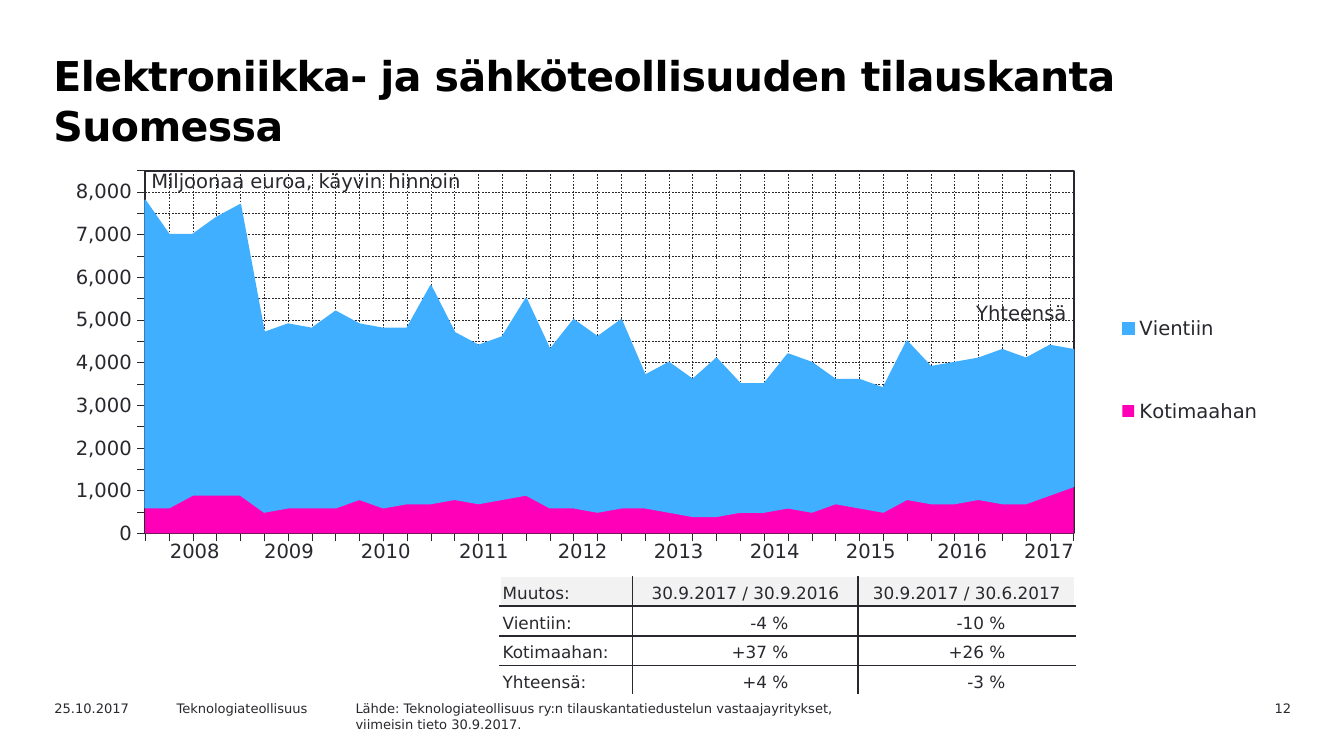
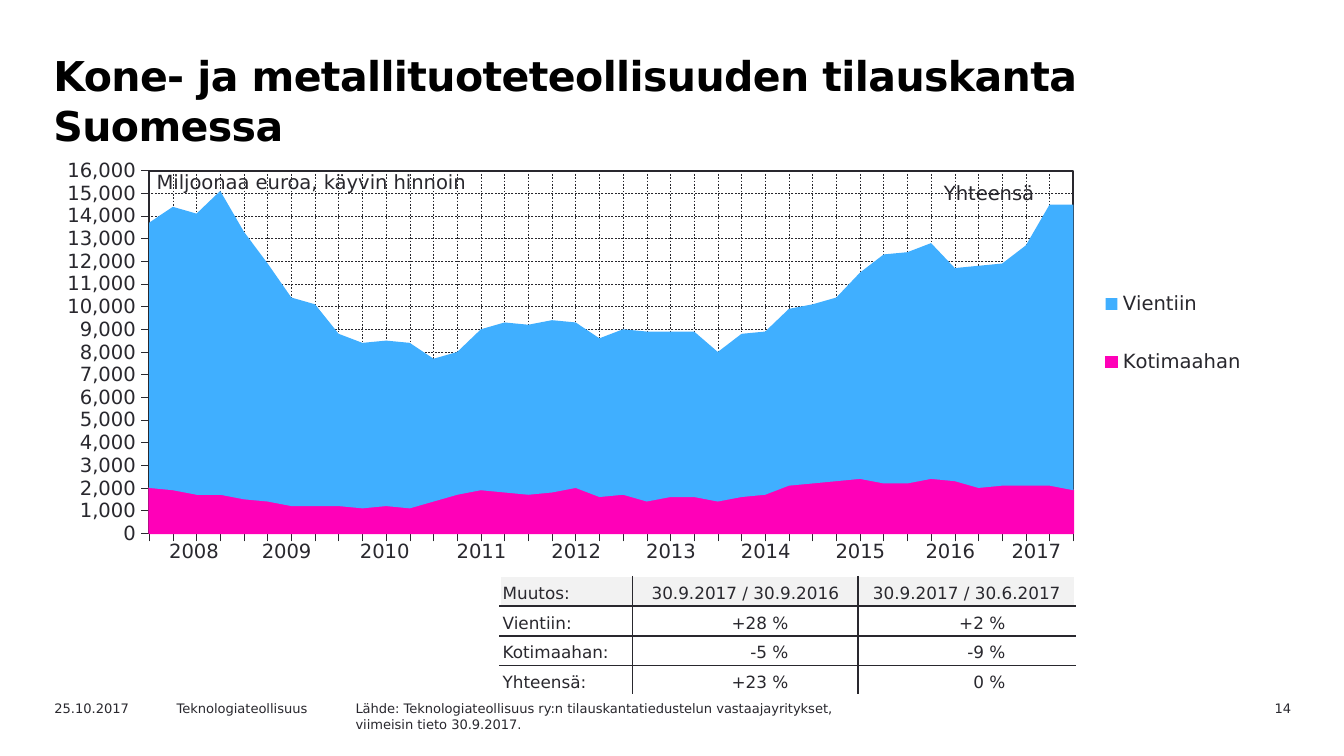
from lxml import etree
from pptx import Presentation
from pptx.chart.data import CategoryChartData
from pptx.dml.color import RGBColor
from pptx.enum.chart import XL_CHART_TYPE, XL_LEGEND_POSITION, XL_TICK_LABEL_POSITION, XL_TICK_MARK
from pptx.enum.dml import MSO_LINE
from pptx.enum.text import MSO_ANCHOR, PP_ALIGN
from pptx.oxml import parse_xml
from pptx.oxml.ns import nsdecls, qn
from pptx.util import Cm, Pt

AREA = XL_CHART_TYPE.AREA_STACKED
LEGEND_RIGHT = XL_LEGEND_POSITION.RIGHT
NO_LABELS = XL_TICK_LABEL_POSITION.NONE
TICK_OUT, TICK_NONE = XL_TICK_MARK.OUTSIDE, XL_TICK_MARK.NONE
DASH = MSO_LINE.DASH
TOP, BOTTOM = MSO_ANCHOR.TOP, MSO_ANCHOR.BOTTOM
LEFT, CENTER, RIGHT = PP_ALIGN.LEFT, PP_ALIGN.CENTER, PP_ALIGN.RIGHT

FONT = "DejaVu Sans"
COLORS = {
    "title": "000000", "ink": "29282E", "paper": "FFFFFF", "header": "F2F2F2",
    "Kotimaahan": "FF00B8", "Vientiin": "40AFFF",
}
PLAIN_TABLE = "{2D5ABB26-0587-4C30-8999-92F81FD0307C}"
FOOTER_TOP = 13.13
YEARS = [str(year) for year in range(2008, 2018)]
SOURCE = ("Lähde: Teknologiateollisuus ry:n tilauskantatiedustelun vastaajayritykset,\n"
          "viimeisin tieto 30.9.2017.")
CHANGE_HEADER = ["Muutos:", "30.9.2017 / 30.9.2016", "30.9.2017 / 30.6.2017"]
CHANGE_LABELS = ["Vientiin:", "Kotimaahan:", "Yhteensä:"]

SECTORS = [
    {
        "title": "Elektroniikka- ja sähköteollisuuden tilauskanta Suomessa",
        "number": "12",
        "frame": (0.99, 3, 23.37, 7.75),
        "plot": (0.075, 0.029, 0.751, 0.885),
        "legend": (0.86, 0.24, 0.12, 0.55),
        "scale": (8500, 500),
        "outlined": "Vientiin",
        "series": {
            "Kotimaahan": [600, 600, 900, 900, 900, 500, 600, 600, 600, 800,
                           600, 700, 700, 800, 700, 800, 900, 600, 600, 500,
                           600, 600, 500, 400, 400, 500, 500, 600, 500, 700,
                           600, 500, 800, 700, 700, 800, 700, 700, 900, 1100],
            "Vientiin": [7200, 6400, 6100, 6500, 6800, 4200, 4300, 4200, 4600, 4100,
                         4200, 4100, 5100, 3900, 3700, 3800, 4600, 3700, 4400, 4100,
                         4400, 3100, 3500, 3200, 3700, 3000, 3000, 3600, 3500, 2900,
                         3000, 2900, 3700, 3200, 3300, 3300, 3600, 3400, 3500, 3200],
        },
        "unit_at": (2.62, 3.07),
        "total_at": (18.21, 5.56),
        "changes": [("-4 %", "-10 %"), ("+37 %", "+26 %"), ("+4 %", "-3 %")],
        "year_widths": [1.78, 1.78, 1.88, 1.83, 1.9, 1.73, 1.9, 1.73, 1.73, 1.55],
    },
    {
        "title": "Kone- ja metallituoteteollisuuden tilauskanta Suomessa",
        "number": "14",
        "frame": (1.07, 3, 23.32, 7.75),
        "plot": (0.075, 0.029, 0.749, 0.885),
        "legend": (0.845, 0.24, 0.12, 0.37),
        "scale": (16000, 1000),
        "outlined": "Kotimaahan",
        "series": {
            "Kotimaahan": [2000, 1900, 1700, 1700, 1500, 1400, 1200, 1200, 1200, 1100,
                           1200, 1100, 1400, 1700, 1900, 1800, 1700, 1800, 2000, 1600,
                           1700, 1400, 1600, 1600, 1400, 1600, 1700, 2100, 2200, 2300,
                           2400, 2200, 2200, 2400, 2300, 2000, 2100, 2100, 2100, 1900],
            "Vientiin": [11700, 12500, 12400, 13400, 11800, 10500, 9200, 8900, 7600, 7300,
                         7300, 7300, 6300, 6300, 7100, 7500, 7500, 7600, 7300, 7000,
                         7300, 7500, 7300, 7300, 6600, 7200, 7200, 7800, 7900, 8100,
                         9100, 10100, 10200, 10400, 9400, 9800, 9800, 10600, 12400, 12600],
        },
        "unit_at": (2.72, 3.1),
        "total_at": (17.6, 3.3),
        "changes": [("+28 %", "+2 %"), ("-5 %", "-9 %"), ("+23 %", "0 %")],
        "year_widths": [1.75, 1.75, 1.96, 1.7, 1.88, 1.7, 1.88, 1.7, 1.7, 1.55],
    },
]


def rgb(name):
    return RGBColor.from_string(COLORS[name])


def style_font(font, size, color="ink", bold=False):
    font.name, font.size, font.bold = FONT, Pt(size), bold
    font.color.rgb = rgb(color)


def write(frame, text, size=10.5, color="ink", bold=False, align=LEFT, leading=None, tracking=None):
    for index, line in enumerate(text.split("\n")):
        para = frame.add_paragraph() if index else frame.paragraphs[0]
        para.alignment = align
        para.space_before = Pt(0)
        if leading:
            para.line_spacing = Pt(leading)
        span = para.add_run()
        span.text = line
        style_font(span.font, size, color, bold)
        if tracking:
            span.font._element.set("spc", str(tracking))


def set_margins(target, left, top, right, bottom):
    target.margin_left, target.margin_top = Cm(left), Cm(top)
    target.margin_right, target.margin_bottom = Cm(right), Cm(bottom)


def manual_layout(area, target=None):
    layout = etree.Element(qn("c:layout"))
    manual = etree.SubElement(layout, qn("c:manualLayout"))
    settings = [("layoutTarget", target)] if target else []
    settings += [("xMode", "edge"), ("yMode", "edge"), *zip("xywh", area)]
    for tag, value in settings:
        etree.SubElement(manual, qn(f"c:{tag}")).set("val", str(value))
    return layout


def place_layout(parent, layout, index):
    for old in parent.findall(qn("c:layout")):
        parent.remove(old)
    parent.insert(index, layout)


def set_borders(cell, colors):
    properties = cell._tc.get_or_add_tcPr()
    for index, (side, color) in enumerate(zip(("L", "R", "T", "B"), colors)):
        properties.insert(index, parse_xml(
            f'<a:ln{side} {nsdecls("a")} w="12700"><a:solidFill>'
            f'<a:srgbClr val="{COLORS[color]}"/></a:solidFill></a:ln{side}>'))


class SlideBuilder:
    def __init__(self):
        self.deck = Presentation()
        self.deck.slide_width, self.deck.slide_height = Cm(25.4), Cm(14.29)
        self.page = None

    def start(self, title):
        self.page = self.deck.slides.add_slide(self.deck.slide_layouts[5])
        box = self.page.shapes.title
        box.left, box.top, box.width, box.height = Cm(0.71), Cm(0.79), Cm(22.2), Cm(1.8)
        frame = box.text_frame
        frame.word_wrap = True
        frame.vertical_anchor = TOP
        set_margins(frame, 0.3, 0.14, 0.25, 0)
        write(frame, title, size=22, color="title", bold=True, leading=27, tracking=-30)

    def text(self, text, left, top, width, height, **style):
        box = self.page.shapes.add_textbox(Cm(left), Cm(top), Cm(width), Cm(height))
        frame = box.text_frame
        frame.word_wrap = True
        set_margins(frame, 0.24, 0.12, 0.24, 0.12)
        write(frame, text, **style)

    def footer(self, number):
        self.text(number, 22.25, FOOTER_TOP, 2.39, 0.46, size=7, align=RIGHT)
        self.text("25.10.2017", 0.79, FOOTER_TOP, 2.54, 0.46, size=7)
        self.text("Teknologiateollisuus", 3.1, FOOTER_TOP, 3.61, 0.46, size=7)
        self.text(SOURCE, 6.48, FOOTER_TOP, 12.7, 0.66, size=7)

    def axis(self, axis):
        axis.has_major_gridlines = True
        axis.major_tick_mark, axis.minor_tick_mark = TICK_OUT, TICK_NONE
        axis.format.line.color.rgb = rgb("ink")
        axis.format.line.width = Pt(0.22)
        grid = axis.major_gridlines.format.line
        grid.color.rgb = rgb("ink")
        grid.width = Pt(0.25)
        grid.dash_style = DASH
        style_font(axis.tick_labels.font, 10.5)

    def chart(self, frame, plot, legend, scale, series, outlined):
        data = CategoryChartData(number_format="#,##0")
        data.categories = [str(quarter) for quarter in range(1, 41)]
        for name, values in series.items():
            data.add_series(name, values)
        chart = self.page.shapes.add_chart(AREA, *map(Cm, frame), data).chart
        chart.has_title = False
        style_font(chart.font, 10.5)
        chart.plots[0].vary_by_categories = False
        for area in chart.plots[0].series:
            area.format.fill.solid()
            area.format.fill.fore_color.rgb = rgb(area.name)
            if area.name == outlined:
                area.format.line.color.rgb = rgb(area.name)
                area.format.line.width = Pt(0.88)
            else:
                area.format.line.fill.background()

        self.axis(chart.category_axis)
        chart.category_axis.tick_label_position = NO_LABELS
        amounts = chart.value_axis
        self.axis(amounts)
        amounts.minimum_scale = 0
        amounts.maximum_scale, amounts.major_unit = scale
        amounts.tick_labels.number_format = "#,##0"
        amounts.tick_labels.number_format_is_linked = False
        amounts._element.find(qn("c:crossBetween")).set("val", "midCat")

        chart.has_legend = True
        chart.legend.position = LEGEND_RIGHT
        chart.legend.include_in_layout = False
        style_font(chart.legend.font, 10.5)
        place_layout(chart.legend._element, manual_layout(legend), 1)
        plot_area = chart._chartSpace.chart.plotArea
        place_layout(plot_area, manual_layout(plot, "inner"), 0)
        plot_area.append(parse_xml(
            f'<c:spPr {nsdecls("c", "a")}><a:noFill/><a:ln w="12700"><a:solidFill>'
            f'<a:srgbClr val="{COLORS["ink"]}"/></a:solidFill></a:ln></c:spPr>'))

    def table(self, left, top, widths, row_height, rows):
        shape = self.page.shapes.add_table(
            len(rows), len(widths), Cm(left), Cm(top), Cm(sum(widths)), Cm(row_height * len(rows)))
        table = shape.table
        table.first_row = table.horz_banding = False
        table._tbl.tblPr.find(qn("a:tableStyleId")).text = PLAIN_TABLE
        for column, width in zip(table.columns, widths):
            column.width = Cm(width)
        for row, texts in zip(table.rows, rows):
            row.height = Cm(row_height)
            for cell, text in zip(row.cells, texts):
                yield cell, text

    def year_labels(self, widths):
        for cell, year in self.table(2.79, 10.08, widths, 0.81, [YEARS]):
            cell.fill.background()
            set_margins(cell, 0.25, 0.13, 0.25, 0.13)
            write(cell.text_frame, year, align=CENTER)

    def change_table(self, changes):
        rows = [CHANGE_HEADER] + [[label, *pair] for label, pair in zip(CHANGE_LABELS, changes)]
        cells = self.table(9.45, 10.9, [2.5, 4.27, 4.1], 0.56, rows)
        for index, (cell, text) in enumerate(cells):
            row, column = divmod(index, 3)
            is_value = row > 0 and column > 0
            cell.fill.solid()
            cell.fill.fore_color.rgb = rgb("paper" if row else "header")
            cell.vertical_anchor = BOTTOM
            set_margins(cell, 0.05, 0.05, 1.32 if is_value else 0.05, 0.05)
            align = RIGHT if is_value else CENTER if column else LEFT
            write(cell.text_frame, text, size=9, align=align)
            outer = (column == 0, column == 2, row == 0, row == 3)
            set_borders(cell, ["paper" if edge else "ink" for edge in outer])


def main():
    builder = SlideBuilder()
    for sector in SECTORS:
        builder.start(sector["title"])
        builder.footer(sector["number"])
        builder.chart(sector["frame"], sector["plot"], sector["legend"],
                      sector["scale"], sector["series"], sector["outlined"])
        builder.text("Miljoonaa euroa, käyvin hinnoin", *sector["unit_at"], 6.6, 0.69)
        builder.change_table(sector["changes"])
        builder.text("Yhteensä", *sector["total_at"], 2.69, 0.69)
        builder.year_labels(sector["year_widths"])
    builder.deck.save("out.pptx")


if __name__ == "__main__":
    main()
